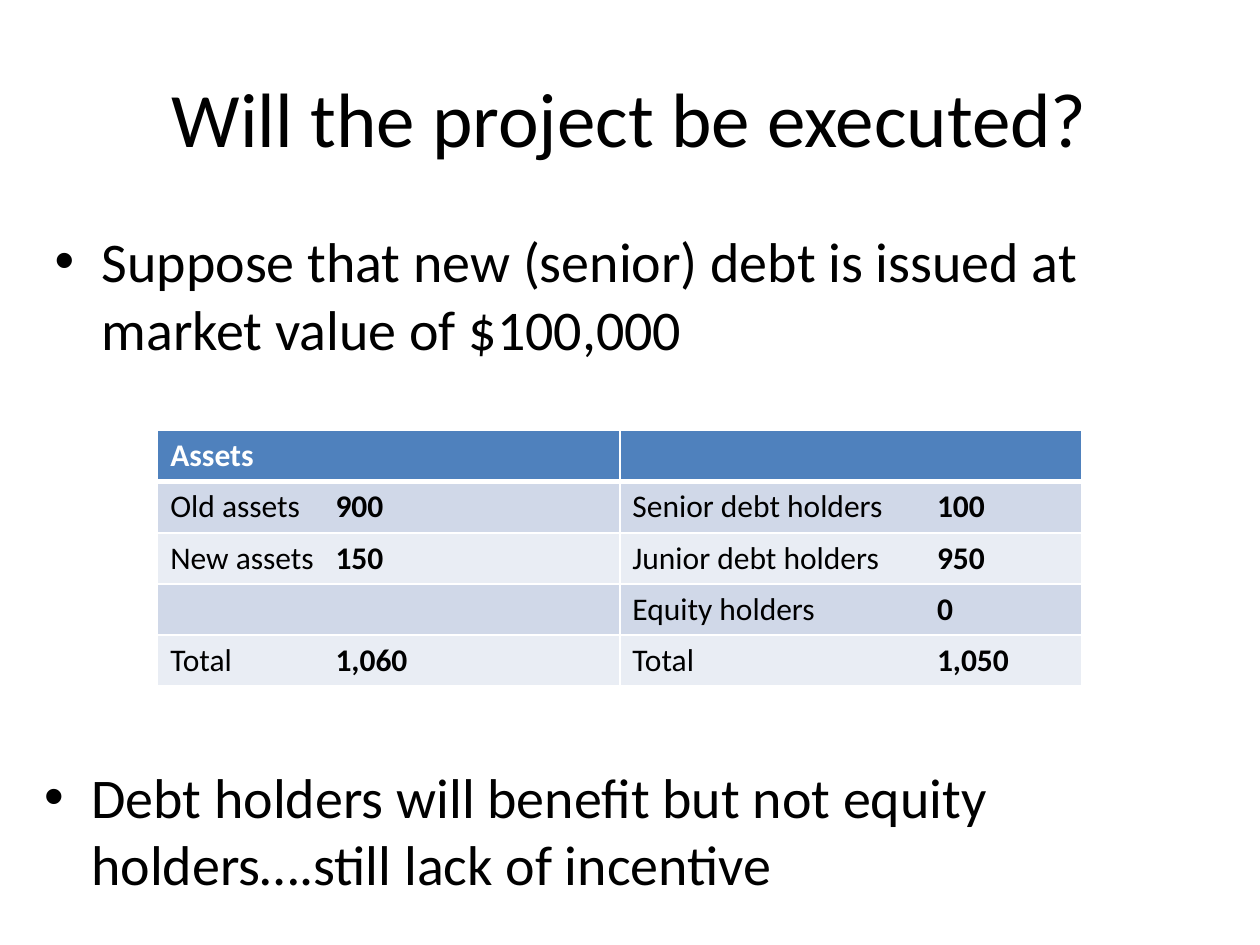
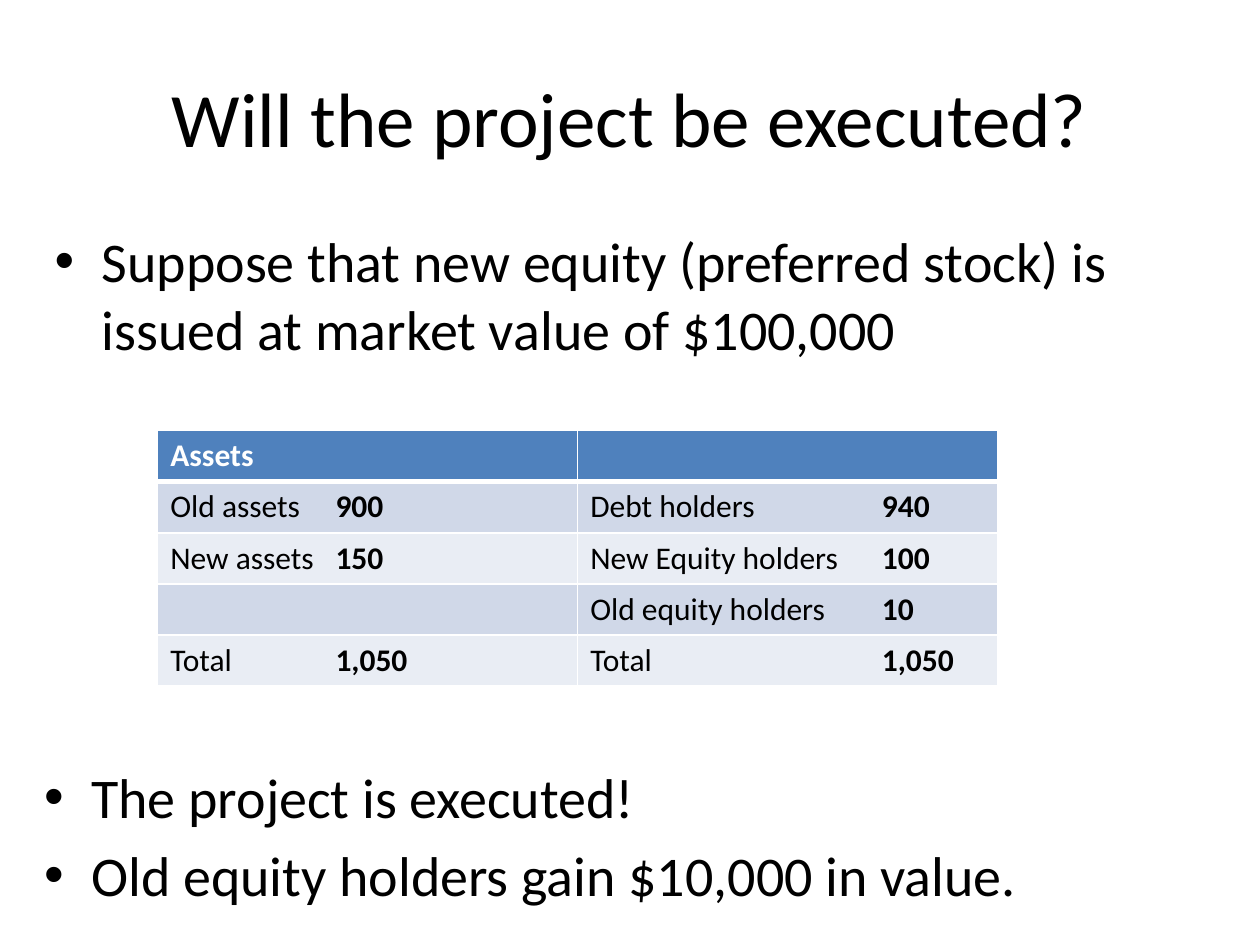
from dataclasses import dataclass
from lxml.etree import SubElement as Sub
from pptx import Presentation
from pptx.dml.color import RGBColor as Rgb
from pptx.enum.text import MSO_ANCHOR as Anchor, PP_ALIGN as Align
from pptx.oxml.ns import qn
from pptx.util import Cm, Pt


@dataclass(frozen=True)
class Theme:
    """Hold the colours and type sizes of all slides."""
    font: str = "Calibri"
    ink: str = "000000"
    paper: str = "FFFFFF"
    head: str = "4F81BD"
    bands: tuple = ("D0D8E8", "E9EDF4")
    title: float = 44
    body: float = 32
    cell: float = 18
    gap: float = 6.4
    thin: float = 1
    thick: float = 3


THEME = Theme()
TITLE = (1.27, 0.76, 22.86, 3.18)
INTRO = (0.85, 4.45, 23.7, 3.39)
CLOSE = (0.64, 15.24, 23.7, 3.39)
INDENT = 0.95


def style(para, size, color):
    """Set the font of a whole paragraph."""
    font = para.font
    font.name, font.size = THEME.font, Pt(size)
    font.color.rgb = Rgb.from_string(color)


def add_frame(slide, box):
    """Add a wrapping text box and return its frame."""
    frame = slide.shapes.add_textbox(*map(Cm, box)).text_frame
    frame.word_wrap = True
    return frame


def add_title(slide, box, text):
    """Centre the slide title in its box."""
    frame = add_frame(slide, box)
    frame.vertical_anchor = Anchor.MIDDLE
    para = frame.paragraphs[0]
    para.text, para.alignment = text, Align.CENTER
    style(para, THEME.title, THEME.ink)


def add_points(slide, box, points):
    """Fill a box with bulleted paragraphs."""
    frame = add_frame(slide, box)
    for i, point in enumerate(points):
        para = frame.add_paragraph() if i else frame.paragraphs[0]
        para.text = point
        props = para._p.get_or_add_pPr()
        props.set("marL", str(Cm(INDENT)))
        props.set("indent", str(-Cm(INDENT)))
        Sub(props, qn("a:buFont"), typeface="Arial")
        Sub(props, qn("a:buChar"), char="•")
        para.space_before = Pt(THEME.gap)
        style(para, THEME.body, THEME.ink)


def add_edges(cell, row):
    """Draw white cell borders, heavier below the header row."""
    props = cell._tc.get_or_add_tcPr()
    heavy = {(0, "B"), (1, "T")}
    for side in "LRTB":
        width = THEME.thick if (row, side) in heavy else THEME.thin
        line = Sub(props, qn(f"a:ln{side}"), w=str(Pt(width)))
        fill = Sub(line, qn("a:solidFill"))
        Sub(fill, qn("a:srgbClr"), val=THEME.paper)


def fill_cell(cell, row, entry, stop):
    """Write a label and a bold amount set at a tab stop."""
    add_edges(cell, row)
    cell.fill.solid()
    fill = THEME.bands[(row - 1) % 2] if row else THEME.head
    cell.fill.fore_color.rgb = Rgb.from_string(fill)
    para = cell.text_frame.paragraphs[0]
    if entry:
        label, *amount = entry
        run = para.add_run()
        run.text, run.font.bold = label, row == 0
        if amount:
            tabs = Sub(para._p.get_or_add_pPr(), qn("a:tabLst"))
            Sub(tabs, qn("a:tab"), pos=str(Cm(stop)), algn="l")
            run = para.add_run()
            run.text, run.font.bold = "\t" + amount[0], True
    style(para, THEME.cell, THEME.ink if row else THEME.paper)


def add_sheet(slide, box, rows, stops):
    """Build the balance sheet with equal columns and rows."""
    grid = slide.shapes.add_table(len(rows), len(stops), *map(Cm, box)).table
    for r, entries in enumerate(rows):
        for c, entry in enumerate(entries):
            fill_cell(grid.cell(r, c), r, entry, stops[c])


def add_case(deck, intro, width, stop, total, claims, close):
    """Lay out one financing case on a new slide."""
    slide = deck.slides.add_slide(deck.slide_layouts[6])
    add_title(slide, TITLE, "Will the project be executed?")
    add_points(slide, INTRO, [intro])
    assets = [("Assets",), ("Old assets", "900"), ("New assets", "150"),
              (), ("Total", total)]
    claims = [(), *claims, ("Total", "1,050")]
    add_sheet(slide, (3.18, 8.68, width, 5.15),
              list(zip(assets, claims)), (3.33, stop))
    add_points(slide, CLOSE, close)


def main():
    """Build and save the deck."""
    deck = Presentation()
    deck.slide_width, deck.slide_height = Cm(25.4), Cm(19.05)
    add_case(
        deck,
        "Suppose that new (senior) debt is issued at market value of $100,000",
        18.63, 6.14, "1,060",
        [("Senior debt holders", "100"), ("Junior debt holders", "950"),
         ("Equity holders", "0")],
        ["Debt holders will benefit but not equity holders….still lack of "
         "incentive"])
    add_case(
        deck,
        "Suppose that new equity (preferred stock) is issued at market value "
        "of $100,000",
        16.93, 5.88, "1,050",
        [("Debt holders", "940"), ("New Equity holders", "100"),
         ("Old equity holders", "10")],
        ["The project is executed!",
         "Old equity holders gain $10,000 in value."])
    deck.save("out.pptx")


if __name__ == "__main__":
    main()
